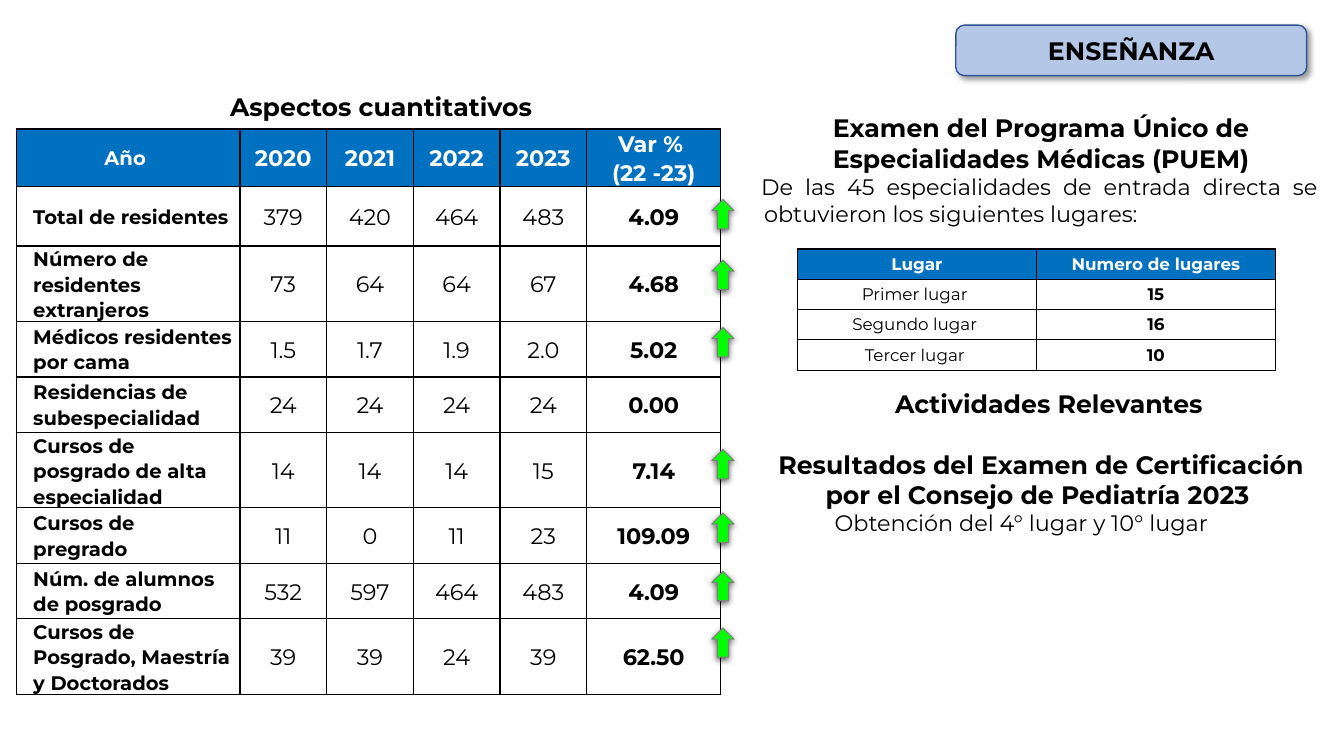
from lxml import etree
from pptx import Presentation
from pptx.dml.color import RGBColor
from pptx.enum.shapes import MSO_SHAPE
from pptx.enum.text import MSO_ANCHOR, PP_ALIGN
from pptx.oxml.ns import qn
from pptx.util import Pt

PX = 9144  # EMU per px, 100 px to the inch
BLACK = RGBColor(0x00, 0x00, 0x00)
WHITE = RGBColor(0xFF, 0xFF, 0xFF)
HEADER_BLUE = RGBColor(0x00, 0x70, 0xC0)
ARROW_GREEN = RGBColor(0x00, 0xFF, 0x00)
ARROW_EDGE = RGBColor(0x80, 0x80, 0x80)
BADGE_BLUE = RGBColor(0xB4, 0xC7, 0xE7)
BADGE_EDGE = RGBColor(0x2F, 0x55, 0x97)
LEFT, CENTER, JUSTIFY = PP_ALIGN.LEFT, PP_ALIGN.CENTER, PP_ALIGN.JUSTIFY
MIDDLE = MSO_ANCHOR.MIDDLE
DOWN_ARROW, ROUNDED = MSO_SHAPE.DOWN_ARROW, MSO_SHAPE.ROUNDED_RECTANGLE


class SlideBuilder:
    font = "Montserrat"

    def __init__(self, slide):
        self.shapes = slide.shapes

    def paragraph(self, paragraph, text, size, bold=False, color=BLACK, align=CENTER,
                  margin=0, indent=0, before=0, spacing=None):
        properties = paragraph._p.get_or_add_pPr()
        properties.set("marL", str(margin * PX))
        properties.set("indent", str(indent * PX))
        paragraph.alignment = align
        if before:
            paragraph.space_before = Pt(before)
        if spacing:
            paragraph.line_spacing = spacing
        run = paragraph.add_run()
        run.text = text
        run.font.name, run.font.size, run.font.bold = self.font, Pt(size), bold
        run.font.color.rgb = color

    def fill_frame(self, frame, paragraphs):
        for index, options in enumerate(paragraphs):
            target = frame.add_paragraph() if index else frame.paragraphs[0]
            self.paragraph(target, **options)

    def text(self, x, y, w, h, paragraphs):
        box = self.shapes.add_textbox(x * PX, y * PX, w * PX, h * PX)
        box.text_frame.word_wrap = True
        self.fill_frame(box.text_frame, paragraphs)

    def shape(self, kind, x, y, w, h, fill, edge, edge_width, shadow):
        shape = self.shapes.add_shape(kind, x * PX, y * PX, w * PX, h * PX)
        shape.shadow.inherit = False
        shape.fill.solid()
        shape.fill.fore_color.rgb = fill
        shape.line.color.rgb = edge
        shape.line.width = Pt(edge_width)
        self.cast_shadow(shape, *shadow)
        return shape

    def cast_shadow(self, shape, opacity, blur, distance, angle):
        effects = shape._element.spPr.find(qn("a:effectLst"))
        outer = etree.SubElement(effects, qn("a:outerShdw"), blurRad=str(Pt(blur)),
                                 dist=str(Pt(distance)), dir=str(angle * 60000),
                                 rotWithShape="0")
        color = etree.SubElement(outer, qn("a:srgbClr"), val=str(BLACK))
        etree.SubElement(color, qn("a:alpha"), val=str(opacity * 1000))

    def table(self, x, y, widths, heights):
        table = self.shapes.add_table(len(heights), len(widths), x * PX, y * PX,
                                      sum(widths) * PX, sum(heights) * PX).table
        table.first_row = table.horz_banding = False
        for column, width in zip(table.columns, widths):
            column.width = width * PX
        for row, height in zip(table.rows, heights):
            row.height = height * PX
        return table

    def cell(self, cell, paragraphs, fill=None, side=10, top=5):
        cell.vertical_anchor = MIDDLE
        cell.margin_left = cell.margin_right = side * PX
        cell.margin_top = cell.margin_bottom = top * PX
        properties = cell._tc.get_or_add_tcPr()
        for edge in ("a:lnL", "a:lnR", "a:lnT", "a:lnB"):
            line = etree.SubElement(properties, qn(edge), w=str(Pt(1)))
            paint = etree.SubElement(line, qn("a:solidFill"))
            etree.SubElement(paint, qn("a:srgbClr"), val=str(BLACK))
        if fill is None:
            cell.fill.background()
        else:
            cell.fill.solid()
            cell.fill.fore_color.rgb = fill
        self.fill_frame(cell.text_frame, paragraphs)


INDICATORS = [
    ("Año ", "2020", "2021", "2022", "2023", "Var % |(22 -23)"),
    ("Total de residentes", "379", "420", "464", "483", "4.09"),
    ("Número de residentes extranjeros", "73", "64", "64", "67", "4.68"),
    ("Médicos residentes por cama", "1.5", "1.7", "1.9", "2.0", "5.02"),
    ("Residencias de subespecialidad", "24", "24", "24", "24", "0.00"),
    ("Cursos de posgrado de alta especialidad", "14", "14", "14", "15", "7.14"),
    ("Cursos de pregrado", "11", "0", "11", "23", "109.09"),
    ("Núm. de alumnos de posgrado", "532", "597", "464", "483", "4.09"),
    ("Cursos de Posgrado, Maestría y Doctorados", "39", "39", "24", "39", "62.50"),
]
PLACES = [
    ("Lugar", "Numero de lugares"),
    ("Primer lugar ", "15"),
    ("Segundo lugar ", "16"),
    ("Tercer lugar ", "10"),
]
RISE_TOPS = [198, 258, 325, 446, 509, 567, 623]


def main():
    deck = Presentation()
    deck.slide_width, deck.slide_height = 1333 * PX, 750 * PX
    builder = SlideBuilder(deck.slides.add_slide(deck.slide_layouts[6]))

    # Quantitative indicators
    builder.text(72, 86, 619, 40, [dict(text="Aspectos cuantitativos ", size=18, bold=True)])
    indicators = builder.table(16, 128, [222] + [86] * 4 + [133], [41, 59] + [55] * 7)
    for r, record in enumerate(INDICATORS):
        for c, value in enumerate(record):
            header, label = r == 0, c == 0
            row_label = label and not header
            style = dict(size=14 if label else 16, bold=header or c in (0, 5),
                         color=WHITE if header else BLACK, spacing=1.07,
                         align=LEFT if row_label else CENTER, margin=10 if row_label else 0)
            builder.cell(indicators.cell(r, c),
                         [dict(text=part, **style) for part in value.split("|")],
                         HEADER_BLUE if header else None, side=7, top=0)

    # Arrows marking a rise
    for top in RISE_TOPS:
        rise = builder.shape(DOWN_ARROW, 706, top, 22, 29, ARROW_GREEN, ARROW_EDGE, 0.75,
                             (63, 4.5, 1.5, 90))
        rise.rotation = 180

    # Exam results and activities
    builder.text(739, 107, 578, 434, [
        dict(text="Examen del Programa Único de Especialidades Médicas (PUEM)",
             size=18, bold=True, margin=9),
        dict(text="De las 45 especialidades de entrada directa se obtuvieron "
                  "los siguientes lugares:", size=16, align=JUSTIFY, margin=9, indent=-3),
        dict(text="Actividades Relevantes", size=18, bold=True, align=LEFT,
             margin=139, before=115),
        dict(text="Resultados del Examen de Certificación por el Consejo de Pediatría 2023 ",
             size=18, bold=True, margin=9, before=22),
        dict(text="Obtención del 4° lugar y 10° lugar", size=16, align=JUSTIFY, margin=79),
    ])

    # Places obtained
    places = builder.table(791, 247, [237] * 2, [30] * 4)
    for r, record in enumerate(PLACES):
        for c, value in enumerate(record):
            header = r == 0
            builder.cell(places.cell(r, c),
                         [dict(text=value, size=12, bold=header or c == 1,
                               color=WHITE if header else BLACK)],
                         HEADER_BLUE if header else None)

    # Section badge
    badge = builder.shape(ROUNDED, 948, 25, 348, 50, BADGE_BLUE, BADGE_EDGE, 1, (40, 4, 3, 45))
    badge.text_frame.vertical_anchor = MIDDLE
    builder.fill_frame(badge.text_frame, [dict(text="ENSEÑANZA", size=18, bold=True)])

    deck.save("out.pptx")


if __name__ == "__main__":
    main()
